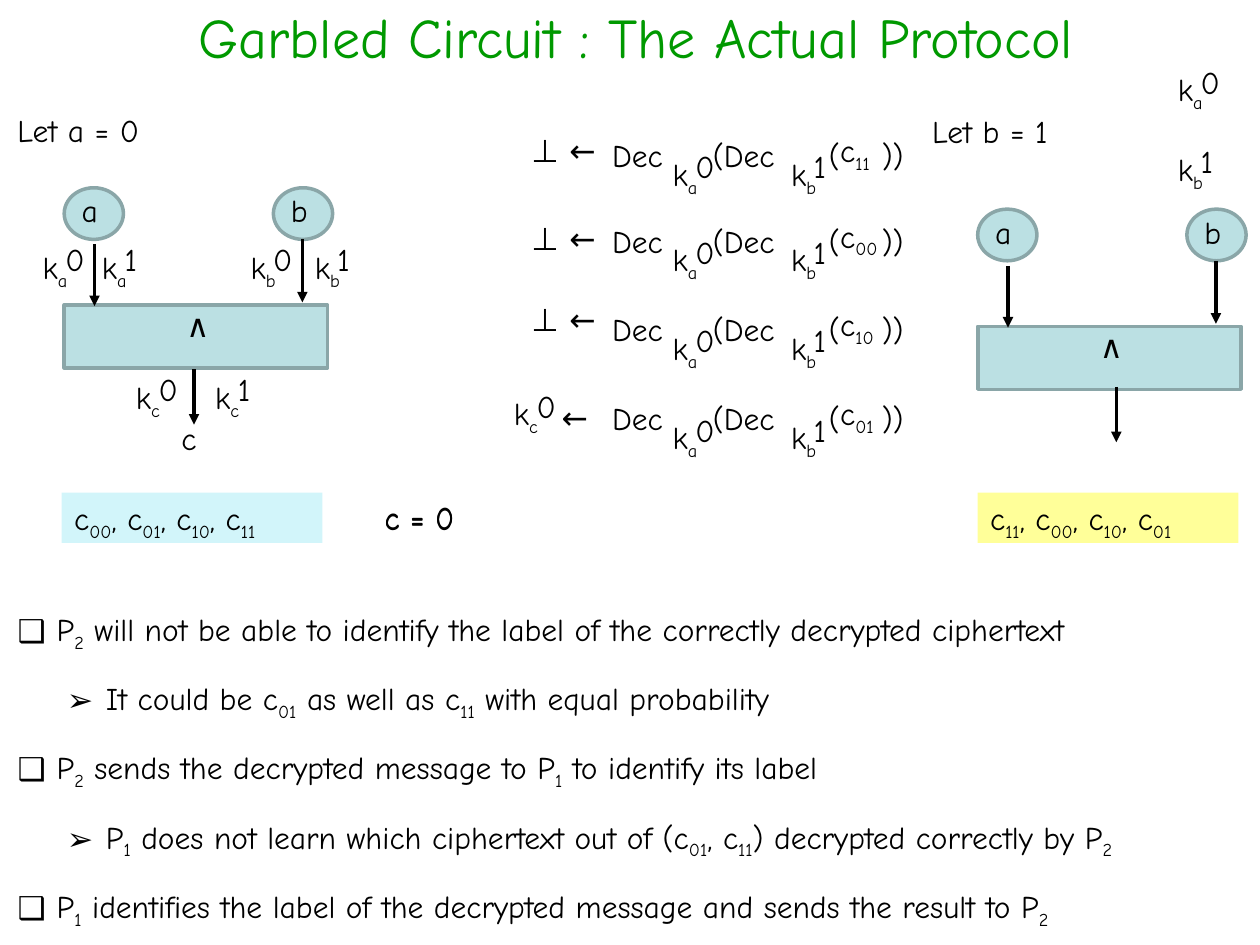
import dataclasses
import lxml.etree
import pptx
import pptx.dml.color
import pptx.enum.shapes
import pptx.enum.text
import pptx.oxml.ns
import pptx.util

Inches = pptx.util.Inches
Pt = pptx.util.Pt
qn = pptx.oxml.ns.qn
Kinds = pptx.enum.shapes.MSO_SHAPE
Align = pptx.enum.text.PP_ALIGN
Anchor = pptx.enum.text.MSO_ANCHOR
Fit = pptx.enum.text.MSO_AUTO_SIZE

BLACK, GREEN, TEAL, EDGE = "000000", "009900", "BBE0E3", "8AA6A8"
FONT = {"name": "Comic Neue", "size": Pt(18)}
FRAME = {"word_wrap": True, "auto_size": Fit.NONE, "vertical_anchor": Anchor.TOP}


@dataclasses.dataclass
class Gate:
    left: float
    top: float
    out: float  # x of the output arrow
    drop: float  # y where the output arrow starts


@dataclasses.dataclass
class Key:
    left: float
    top: float
    wire: str
    bit: str


@dataclasses.dataclass
class Trial:
    top: float
    index: str


@dataclasses.dataclass
class Item:
    level: int
    text: str


@dataclasses.dataclass
class Label:
    left: float
    top: float
    width: float
    text: str


GATES = [Gate(0.51, 1.49, 1.54, 2.93), Gate(7.76, 1.66, 8.86, 3.07)]
KEYS = [
    Key(0.24, 1.92, "a", "0"), Key(0.71, 1.92, "a", "1"),
    Key(1.89, 1.92, "b", "0"), Key(2.4, 1.92, "b", "1"),
    Key(0.98, 2.95, "c", "0"), Key(1.61, 2.95, "c", "1"),
    Key(9.25, 0.51, "a", "0"), Key(9.25, 1.14, "b", "1"),
    Key(3.98, 3.08, "c", "0"),
]
TRIALS = [Trial(1.03, "11"), Trial(1.71, "00"), Trial(2.41, "10"), Trial(3.12, "01")]
LABELS = [
    Label(0.04, 0.83, 1.32, "Let a = 0"), Label(7.3, 0.84, 1.32, "Let b = 1"),
    Label(1.34, 3.28, 0.51, "c"),
    Label(4.12, 0.99, 0.73, "⊥ ←"), Label(4.12, 1.69, 0.73, "⊥ ←"),
    Label(4.12, 2.33, 0.73, "⊥ ←"), Label(4.36, 3.11, 0.73, "←"),
    Label(2.87, 3.9, 0.9, " c = 0"), Label(2.87, 3.91, 0.9, " c = 0"),
]
ITEMS = [
    Item(0, "P|2| will not be able to identify the label of the correctly decrypted ciphertext"),
    Item(1, "It could be c|01| as well as c|11| with equal probability"),
    Item(0, "P|2| sends the decrypted message to P|1| to identify its label"),
    Item(1, "P|1| does not learn which ciphertext out of (c|01|, c|11|) decrypted correctly by P|2|"),
    Item(0, "P|1| identifies the label of the decrypted message and sends the result to P|2|"),
]


def paint(color: str) -> pptx.dml.color.RGBColor:
    return pptx.dml.color.RGBColor.from_string(color)


def place(shape, left: float, top: float, width: float, height: float) -> None:
    box = {"left": left, "top": top, "width": width, "height": height}
    for name, value in box.items():
        setattr(shape, name, Inches(value))


def frame(shape):
    for name, value in FRAME.items():
        setattr(shape.text_frame, name, value)
    return shape.text_frame


def write(para, text: str, color: str = BLACK, **extra) -> None:
    """Fill a paragraph; parts between bars are subscripts."""
    for i, part in enumerate(text.split("|")):
        if not part:
            continue
        run = para.add_run()
        run.text = part
        for name, value in {**FONT, **extra}.items():
            setattr(run.font, name, value)
        run.font.color.rgb = paint(color)
        if i % 2:
            run.font._element.set("baseline", "-25000")


def label(slide, left: float, top: float, width: float, text: str):
    box = slide.shapes.add_textbox(Inches(left), Inches(top), Inches(width), Inches(0.4))
    para = frame(box).paragraphs[0]
    write(para, text)
    return para


def block(slide, kind, left: float, top: float, width: float, height: float,
          fill: str, edge: str = ""):
    shape = slide.shapes.add_shape(
        kind, Inches(left), Inches(top), Inches(width), Inches(height))
    shape.shadow.inherit = False
    shape.fill.solid()
    shape.fill.fore_color.rgb = paint(fill)
    if edge:
        shape.line.color.rgb = paint(edge)
        shape.line.width = Pt(2)
    else:
        shape.line.fill.background()
    return shape


def arrow(slide, x: float, top: float, end: float) -> None:
    line = slide.shapes.add_connector(
        pptx.enum.shapes.MSO_CONNECTOR.STRAIGHT,
        Inches(x), Inches(top), Inches(x), Inches(end))
    line.line.color.rgb = paint(BLACK)
    line.line.width = Pt(2)
    props = line._element.spPr
    lxml.etree.SubElement(props.find(qn("a:ln")), qn("a:tailEnd"), type="triangle")
    lxml.etree.SubElement(props, qn("a:effectLst"))


def draw_gate(slide, gate: Gate) -> None:
    x, y = gate.left, gate.top
    for left, name in ((x, "a"), (x + 1.66, "b")):
        block(slide, Kinds.OVAL, left, y, 0.47, 0.41, TEAL, EDGE)
        label(slide, left + 0.04, y - 0.02, 0.47, name)
    block(slide, Kinds.RECTANGLE, x, y + 0.93, 2.09, 0.5, TEAL, EDGE)
    label(slide, x + 0.87, y + 0.89, 0.55, "∧")
    arrow(slide, x + 0.24, y + 0.45, y + 0.94)
    arrow(slide, x + 1.89, y + 0.41, y + 0.91)
    arrow(slide, gate.out, gate.drop, gate.drop + 0.44)


def draw_key(slide, key: Key) -> None:
    label(slide, key.left, key.top, 0.51, f"k|{key.wire}|")
    label(slide, key.left + 0.18, key.top - 0.06, 0.25, key.bit)


def draw_trial(slide, trial: Trial) -> None:
    para = label(slide, 4.76, trial.top, 3.3, "Dec\t(Dec\t(\t))")
    tabs = lxml.etree.SubElement(para._p.get_or_add_pPr(), qn("a:tabLst"))
    for stop in (0.8, 1.72, 2.14):
        lxml.etree.SubElement(tabs, qn("a:tab"), pos=str(Inches(stop)), algn="l")
    draw_key(slide, Key(5.24, trial.top + 0.15, "a", "0"))
    draw_key(slide, Key(6.18, trial.top + 0.15, "b", "1"))
    label(slide, 6.57, trial.top - 0.04, 0.57, f"c|{trial.index}|")


def draw_codes(slide, left: float, fill: str, order: list[str]) -> None:
    shape = block(slide, Kinds.RECTANGLE, left, 3.91, 2.07, 0.4, fill)
    para = frame(shape).paragraphs[0]
    para.alignment = Align.LEFT
    write(para, ", ".join(f"c|{code}|" for code in order))


def draw_list(body) -> None:
    place(body, 0.04, 4.58, 9.92, 2.87)
    text = frame(body)
    for i, item in enumerate(ITEMS):
        para = text.add_paragraph() if i else text.paragraphs[0]
        para.level = item.level
        para.line_spacing = Pt(39.6)
        para.space_before = Pt(0)
        props = para._p.get_or_add_pPr()
        props.set("marL", str(Inches(0.31 + 0.39 * item.level)))
        props.set("indent", str(Inches(-0.31)))
        lxml.etree.SubElement(props, qn("a:buChar"), char="❑➢"[item.level])
        write(para, item.text)


def main() -> None:
    deck = pptx.Presentation()
    deck.slide_width, deck.slide_height = Inches(10), Inches(7.5)
    slide = deck.slides.add_slide(deck.slide_layouts[1])
    title, body = slide.placeholders
    place(title, 0.22, -0.03, 9.66, 0.63)
    para = frame(title).paragraphs[0]
    para.alignment = Align.CENTER
    write(para, "Garbled Circuit : The Actual Protocol", GREEN, size=Pt(32))
    draw_list(body)
    for gate in GATES:
        draw_gate(slide, gate)
    for key in KEYS:
        draw_key(slide, key)
    for trial in TRIALS:
        draw_trial(slide, trial)
    for item in LABELS:
        label(slide, item.left, item.top, item.width, item.text)
    draw_codes(slide, 0.49, "D2F5FA", ["00", "01", "10", "11"])
    draw_codes(slide, 7.76, "FFFF99", ["11", "00", "10", "01"])
    deck.save("out.pptx")


if __name__ == "__main__":
    main()
